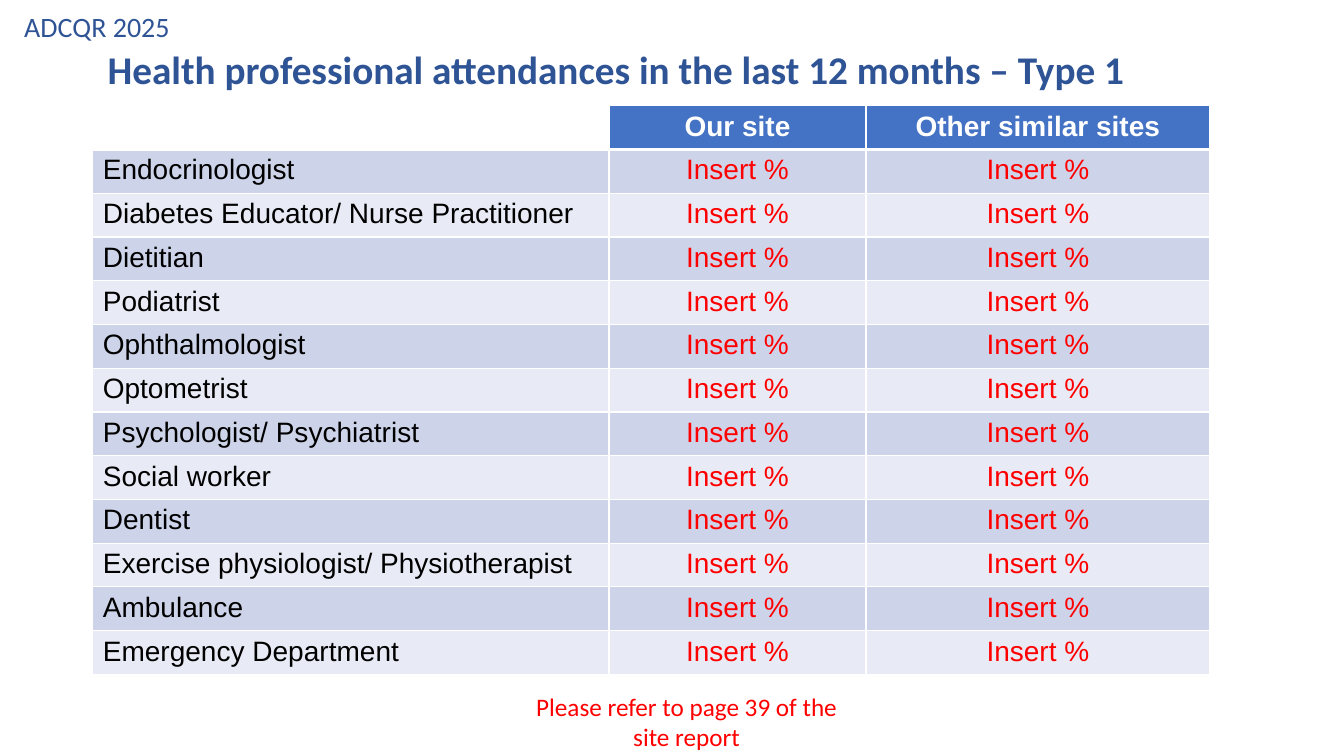
import dataclasses

import lxml.etree
import pptx
import pptx.dml.color
import pptx.enum.text
import pptx.oxml.ns
import pptx.util

Inches = pptx.util.Inches
ALIGN = pptx.enum.text.PP_ALIGN


@dataclasses.dataclass(frozen=True)
class Theme:
    heading_font: str = "Calibri"
    table_font: str = "Arial"
    blue: str = "2F5496"
    header_fill: str = "4472C4"
    bands: tuple = ("CDD4EA", "E8EBF5")
    white: str = "FFFFFF"
    black: str = "000000"
    red: str = "FF0000"
    label_size: int = 20
    heading_size: int = 28
    table_size: int = 20
    note_size: int = 18
    border: int = 1
    header_border: int = 3


class SlideBuilder:
    def __init__(self, slide, theme):
        self.slide = slide
        self.theme = theme

    def set_text(self, frame, text, font, size, color, bold=False, align=ALIGN.LEFT):
        paragraph = frame.paragraphs[0]
        paragraph.text = text
        paragraph.alignment = align
        paragraph.font.name = font
        paragraph.font.size = pptx.util.Pt(size)
        paragraph.font.bold = bold
        paragraph.font.color.rgb = pptx.dml.color.RGBColor.from_string(color)
        return paragraph

    def title(self, text, left, top, width, height):
        shape = self.slide.shapes.title
        shape.left, shape.top = Inches(left), Inches(top)
        shape.width, shape.height = Inches(width), Inches(height)
        frame = shape.text_frame
        frame.vertical_anchor = pptx.enum.text.MSO_ANCHOR.MIDDLE
        frame.auto_size = pptx.enum.text.MSO_AUTO_SIZE.NONE
        paragraph = self.set_text(frame, text, self.theme.heading_font,
                                  self.theme.label_size, self.theme.blue)
        paragraph.line_spacing = 0.9

    def text_box(self, text, left, top, width, height, size, color,
                 bold=False, align=ALIGN.LEFT, vertical_inset=0.05):
        shape = self.slide.shapes.add_textbox(
            Inches(left), Inches(top), Inches(width), Inches(height))
        frame = shape.text_frame
        frame.word_wrap = True
        frame.auto_size = pptx.enum.text.MSO_AUTO_SIZE.SHAPE_TO_FIT_TEXT
        frame.margin_top = frame.margin_bottom = Inches(vertical_inset)
        self.set_text(frame, text, self.theme.heading_font, size, color, bold, align)

    def cell_borders(self, cell, top, bottom):
        properties = cell._tc.get_or_add_tcPr()
        widths = {"L": self.theme.border, "R": self.theme.border, "T": top, "B": bottom}
        for side, width in widths.items():
            line = lxml.etree.SubElement(
                properties, pptx.oxml.ns.qn(f"a:ln{side}"), w=str(pptx.util.Pt(width)))
            fill = lxml.etree.SubElement(line, pptx.oxml.ns.qn("a:solidFill"))
            lxml.etree.SubElement(
                fill, pptx.oxml.ns.qn("a:srgbClr"), val=self.theme.white)

    def cell(self, cell, text, row, column):
        theme = self.theme
        top = theme.header_border if row == 1 else theme.border
        bottom = theme.header_border if row == 0 else theme.border
        self.cell_borders(cell, top, bottom)
        if row == 0:
            fill = theme.header_fill if text else theme.white
            color = theme.white
        else:
            fill = theme.bands[(row - 1) % 2]
            color = theme.red if column else theme.black
        cell.fill.solid()
        cell.fill.fore_color.rgb = pptx.dml.color.RGBColor.from_string(fill)
        self.set_text(cell.text_frame, text, theme.table_font, theme.table_size, color,
                      row == 0, ALIGN.CENTER if column else ALIGN.LEFT)

    def table(self, rows, left, top, column_widths, height):
        shape = self.slide.shapes.add_table(
            len(rows), len(column_widths), Inches(left), Inches(top),
            Inches(sum(column_widths)), Inches(height))
        table = shape.table
        table.first_row = False
        table.horz_banding = False
        for column, width in zip(table.columns, column_widths):
            column.width = Inches(width)
        for row_index, values in enumerate(rows):
            for column_index, text in enumerate(values):
                self.cell(table.cell(row_index, column_index), text,
                          row_index, column_index)


def main():
    presentation = pptx.Presentation()
    presentation.slide_width = Inches(13.33)
    presentation.slide_height = Inches(7.5)
    slide = presentation.slides.add_slide(presentation.slide_layouts[5])
    theme = Theme()
    builder = SlideBuilder(slide, theme)

    builder.title("ADCQR 2025", 0.14, 0.13, 1.67, 0.3)
    builder.text_box("Health professional attendances in the last 12 months – Type 1",
                     0.97, 0.4, 11.25, 0.57, theme.heading_size, theme.blue, bold=True)

    professions = [
        "Endocrinologist", "Diabetes Educator/ Nurse Practitioner", "Dietitian",
        "Podiatrist", "Ophthalmologist", "Optometrist", "Psychologist/ Psychiatrist",
        "Social worker", "Dentist", "Exercise physiologist/ Physiotherapist",
        "Ambulance", "Emergency Department",
    ]
    rows = [("", "Our site", "Other similar sites")]
    rows += [(profession, "Insert %", "Insert %") for profession in professions]
    builder.table(rows, 0.92, 1.05, (5.12, 2.55, 3.41), 5.63)

    builder.text_box("Please refer to page 39 of the site report",
                     5.17, 6.76, 3.28, 0.81, theme.note_size, theme.red,
                     align=ALIGN.CENTER, vertical_inset=0.1)
    presentation.save("out.pptx")


if __name__ == "__main__":
    main()
